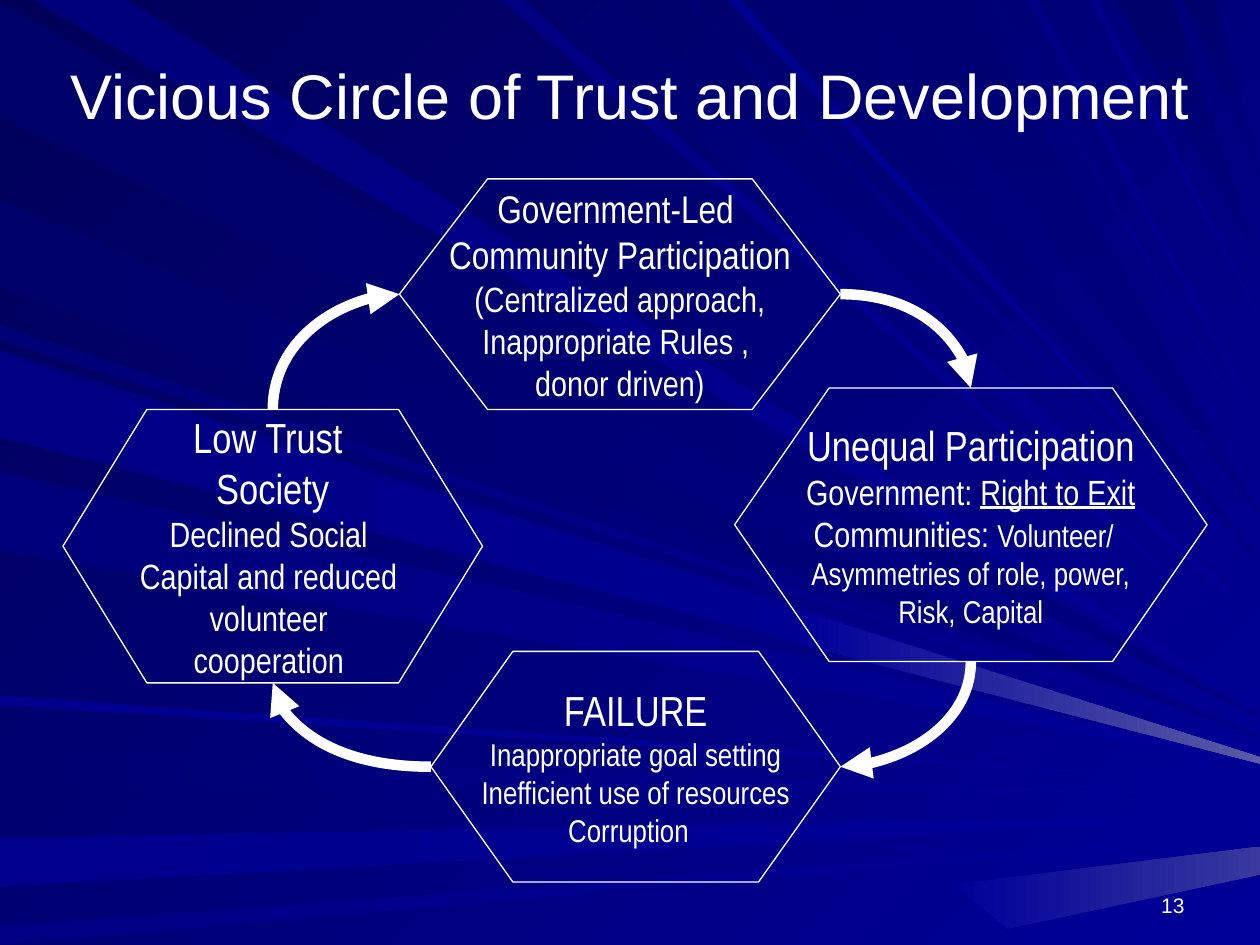
from pptx import Presentation
from pptx.dml.color import RGBColor
from pptx.enum import shapes, text
from pptx.oxml import parse_xml
from pptx.oxml.ns import nsdecls, qn
from pptx.util import Inches, Pt

WIDTH, HEIGHT = 10, 7.5
WHITE, BLUE, NAVY = "FFFFFF", "000099", "000080"
CENTER, RIGHT = text.PP_ALIGN.CENTER, text.PP_ALIGN.RIGHT
MIDDLE, BOTTOM = text.MSO_ANCHOR.MIDDLE, text.MSO_ANCHOR.BOTTOM

# Rays narrow from a base on the left or top edge to a tip on the right edge:
# base start, base end, tip height, first and last colour
LEFT_RAYS = [
    (0.02, 0.93, 5.69, "000069", NAVY),
    (5.96, 6.23, 6.32, "000071", BLUE),
    (6.65, 7.04, 6.47, "00008C", BLUE),
    (7.35, 7.5, 6.62, "000085", BLUE),
    (2.58, 2.7, 5.89, "000076", BLUE),
    (1.59, 2.28, 5.85, "00006B", NAVY),
    (2.78, 3.42, 6, "00007E", BLUE),
    (3.74, 4.37, 6.06, "00007B", BLUE),
    (5.52, 5.6, 6.22, "00008E", BLUE),
    (2.83, 3.47, 6.03, "000085", BLUE),
]
TOP_RAYS = [
    (0.26, 1.01, 5.63, "00007B", BLUE),
    (3.98, 4.16, 5.18, "000083", BLUE),
    (4.26, 4.92, 4.93, "00006D", BLUE),
    (5.4, 5.52, 4.63, "000073", BLUE),
    (6.06, 6.61, 4.46, "000073", NAVY),
    (5.77, 5.88, 4.54, "00008E", BLUE),
    (6.86, 7.7, 4.1, "000073", NAVY),
    (7.85, 7.92, 3.57, "000078", BLUE),
    (8.15, 8.24, 3.36, "000085", BLUE),
    (8.65, 8.72, 2.54, "00008A", BLUE),
    (8.87, 9.3, 2.1, "00006B", NAVY),
    (9.39, 9.64, 1.4, "00006D", NAVY),
]
# Bright patches near the right edge
GLOWS = [
    ([(6.37, 4.85), (6.33, 5.11), (10, 6.06), (10, 6.01)], "5A5AA6"),
    ([(7.56, 7.02), (8, 7.37), (10, 6.94), (10, 6.72)], "39399E"),
]

# Stages in clockwise order: box, then (size, lines) blocks;
# a line is a string or a list of (text, size, underlined) runs
STAGES = [
    ((3.17, 1.42, 3.5, 1.83), [
        (22, ["Government-Led ", "Community Participation"]),
        (20, ["(Centralized approach,", "Inappropriate Rules , ", "donor driven)"])]),
    ((5.83, 3.08, 3.75, 2.17), [
        (24, ["Unequal Participation"]),
        (20, [[("Government: ", 20, False), ("Right to Exit", 20, True)],
              [("Communities: ", 20, False), ("Volunteer/  ", 18, False)]]),
        (18, ["Asymmetries of role, power,", "Risk, Capital"])]),
    ((3.42, 5.17, 3.25, 1.83), [
        (24, ["FAILURE"]),
        (18, ["Inappropriate goal setting", "Inefficient use of resources",
              "Corruption  "])]),
    ((0.5, 3.25, 3.33, 2.17), [
        (24, ["Low Trust ", "Society"]),
        (20, ["Declined Social ", "Capital and reduced ", "volunteer ",
              "cooperation "])]),
]
# Sides where the arrow from each stage leaves and arrives
ARROW_SIDES = [("right", "top"), ("bottom", "right"), ("left", "bottom"), ("top", "left")]


def rgb(color):
    return RGBColor.from_string(color)


def paint_gradient(fill, colors, angle):
    fill.gradient()
    fill.gradient_angle = (360 - angle) % 360
    for stop, color in zip(fill.gradient_stops, colors):
        stop.color.rgb = rgb(color)


def write(tf, blocks, font, align, anchor, wrap):
    for name, value in {"word_wrap": wrap, "vertical_anchor": anchor}.items():
        setattr(tf, name, value)
    lines = [(size, line) for size, group in blocks for line in group]
    for i, (size, line) in enumerate(lines):
        p = tf.add_paragraph() if i else tf.paragraphs[0]
        p.alignment = align
        runs = [(line, size, False)] if isinstance(line, str) else line
        for words, points, underline in runs:
            r = p.add_run()
            r.text = words
            style = {"name": font, "size": Pt(points), "underline": underline}
            for name, value in style.items():
                setattr(r.font, name, value)
            r.font.color.rgb = rgb(WHITE)


def add_polygon(group, points, colors, angle):
    start, *rest = [(Inches(x), Inches(y)) for x, y in points]
    builder = group.shapes.build_freeform(*start)
    builder.add_line_segments(rest, close=True)
    sp = builder.convert_to_shape()
    sp.shadow.inherit = False
    sp.line.fill.background()
    paint_gradient(sp.fill, colors, angle)


def add_background(s):
    paint_gradient(s.background.fill, ["000058", BLUE], 45)
    group = s.shapes.add_group_shape()
    for a, b, tip, *colors in LEFT_RAYS:
        add_polygon(group, [(0, a), (0, b), (WIDTH, tip)], colors, 0)
    for a, b, tip, *colors in TOP_RAYS:
        angle = 90 if NAVY in colors else 45
        add_polygon(group, [(a, 0), (b, 0), (WIDTH, tip)], colors, angle)
    for points, color in GLOWS:
        add_polygon(group, points, [BLUE, color], 0)


def add_label(s, box, words, size, align, anchor):
    sp = s.shapes.add_textbox(*map(Inches, box))
    write(sp.text_frame, [(size, [words])], "Arial", align, anchor, True)


def add_stage(s, box, blocks):
    kind = shapes.MSO_SHAPE.FLOWCHART_PREPARATION
    sp = s.shapes.add_shape(kind, *map(Inches, box))
    sp.shadow.inherit = False
    sp.fill.background()
    sp.line.color.rgb = rgb(WHITE)
    sp.line.width = Pt(0.75)
    write(sp.text_frame, blocks, "Arial Narrow", CENTER, MIDDLE, False)


def side_point(box, side):
    x, y, w, h = box
    return {"top": (x + w / 2, y), "left": (x, y + h / 2),
            "bottom": (x + w / 2, y + h), "right": (x + w, y + h / 2)}[side]


def add_curved_arrow(s, start, end, rotation):
    (x1, y1), (x2, y2) = start, end
    w, h = abs(x2 - x1), abs(y2 - y1)
    if rotation % 180:
        w, h = h, w
    left, top = (x1 + x2 - w) / 2, (y1 + y2 - h) / 2
    cxn = s.shapes.add_connector(shapes.MSO_CONNECTOR.CURVE,
                                 *map(Inches, (left, top, left + w, top + h)))
    cxn.line.color.rgb = rgb(WHITE)
    cxn.line.width = Pt(6)
    # Quarter curve, turned, with a head and no shadow
    pr = cxn._element.spPr
    pr.find(qn("a:prstGeom")).set("prst", "curvedConnector2")
    pr.find(qn("a:xfrm")).set("rot", str(rotation * 60000))
    pr.find(qn("a:ln")).append(parse_xml(f'<a:tailEnd {nsdecls("a")} type="triangle"/>'))
    pr.append(parse_xml(f'<a:effectLst {nsdecls("a")}/>'))


def main():
    prs = Presentation()
    prs.slide_width, prs.slide_height = Inches(WIDTH), Inches(HEIGHT)
    s = prs.slides.add_slide(prs.slide_layouts[6])
    add_background(s)

    # Slide number and title
    add_label(s, (7.17, 6.83, 2.33, 0.5), "13", 12, RIGHT, BOTTOM)
    add_label(s, (0.25, 0.33, 9.5, 0.83), "Vicious Circle of Trust and Development",
              36, CENTER, MIDDLE)

    # Circle of stages, each arrow a quarter turn after the last
    for box, blocks in STAGES:
        add_stage(s, box, blocks)
    boxes = [box for box, _ in STAGES]
    for i, (leave, arrive) in enumerate(ARROW_SIDES):
        start = side_point(boxes[i], leave)
        end = side_point(boxes[(i + 1) % len(boxes)], arrive)
        add_curved_arrow(s, start, end, i * 90)

    prs.save("out.pptx")


if __name__ == "__main__":
    main()
